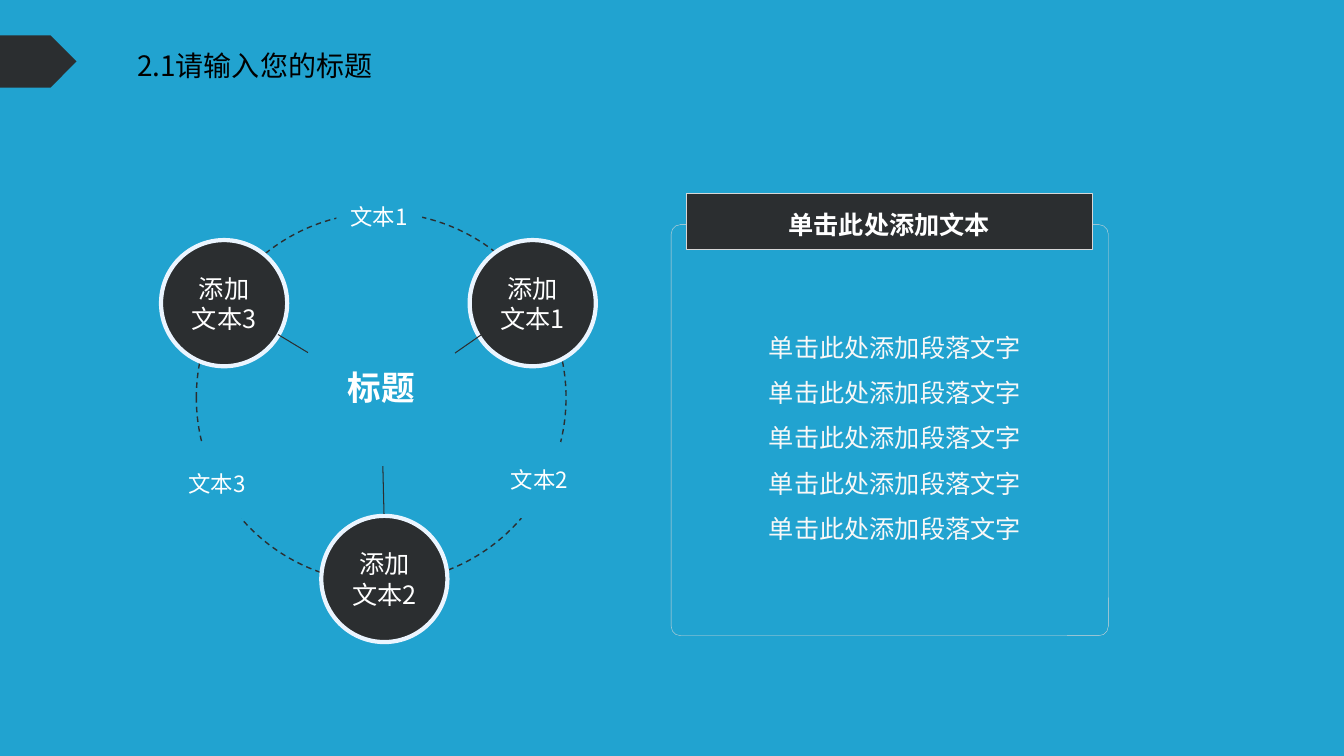
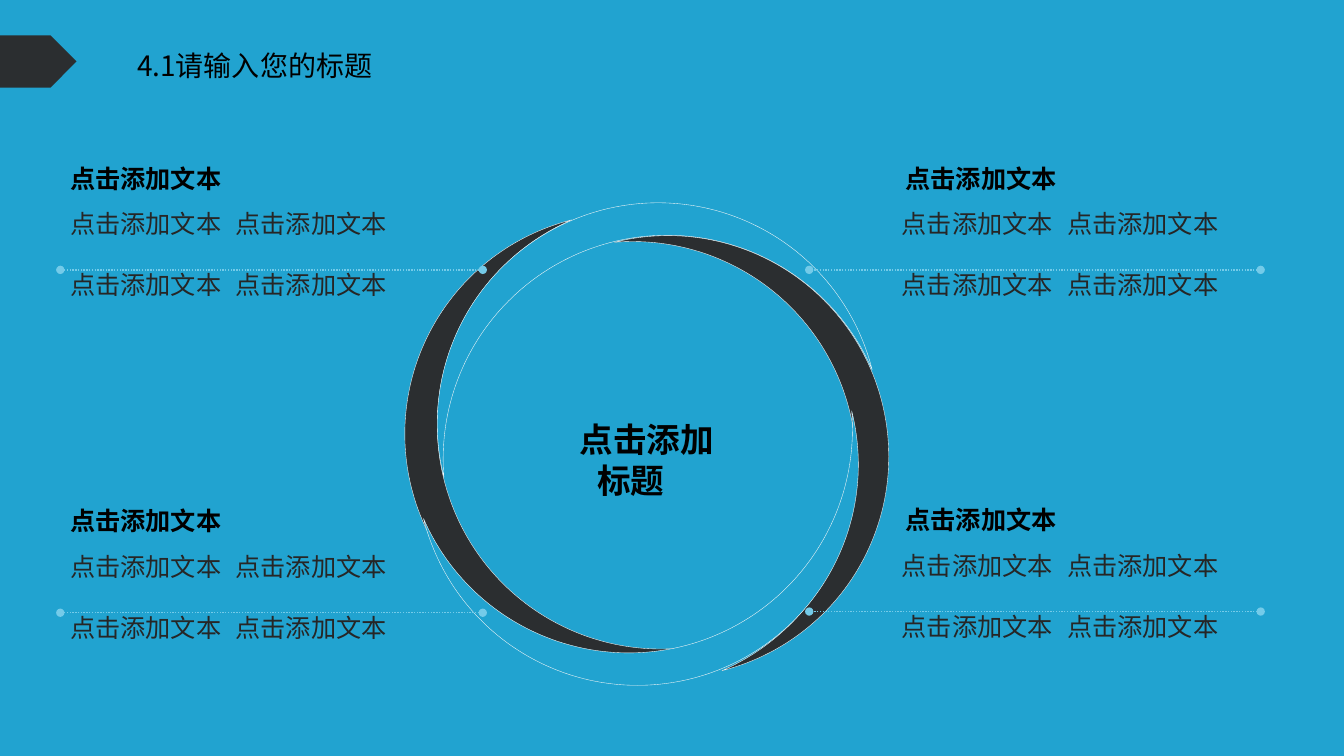
from lxml.etree import SubElement
from pptx import Presentation
from pptx.dml.color import RGBColor
from pptx.enum.dml import MSO_LINE as Dash
from pptx.enum.shapes import MSO_CONNECTOR as Link, MSO_SHAPE as Form
from pptx.enum.text import MSO_ANCHOR as Anchor, MSO_AUTO_SIZE as Fit, PP_ALIGN as Align
from pptx.oxml.ns import qn
from pptx.util import Cm, Pt

BLUE = RGBColor(0x21, 0xA3, 0xD0)
DARK = RGBColor(0x2B, 0x2E, 0x30)
GREY = RGBColor(0xD7, 0xD7, 0xD7)
PALE = RGBColor(0xF8, 0xF8, 0xF8)
ICE = RGBColor(0xEB, 0xF5, 0xFF)
SKY = RGBColor(0x74, 0xCB, 0xE9)
INK = RGBColor(0x26, 0x26, 0x26)
BLACK = RGBColor(0, 0, 0)
WHITE = RGBColor(0xFF, 0xFF, 0xFF)
FONT = "Noto Sans CJK SC"


class Deck:
    """Holds the shared style and the slide being drawn; all lengths are in cm."""

    def __init__(self):
        self.prs = Presentation()
        self.prs.slide_width, self.prs.slide_height = Cm(33.88), Cm(19.05)
        back = self.prs.slide_master.background.fill
        back.solid()
        back.fore_color.rgb = BLUE
        self.slide = None

    def start(self, title):
        """Add a slide with its title and the arrow band at the left edge."""
        self.slide = self.prs.slides.add_slide(self.prs.slide_layouts[5])
        head = self.slide.shapes.title
        head.left, head.top, head.width, head.height = map(Cm, (3.2, 1.09, 6.5, 1.12))
        head.text_frame.auto_size = Fit.NONE
        head.text_frame.vertical_anchor = Anchor.TOP
        self.label(head, [title], 20, BLACK, align=Align.LEFT)
        self.shape(Form.PENTAGON, (0, 0.89, 1.93, 1.32), DARK)
        self.shape(Form.CHEVRON, (1.57, 0.89, 1.19, 1.32), BLUE)

    def label(self, shape, lines, size, color, bold=False, align=Align.CENTER,
              space=None, gap=0, wrap=True, font=FONT):
        """Fill a shape with paragraphs; gap is the space between them in points."""
        frame = shape.text_frame
        frame.word_wrap = wrap
        for i, line in enumerate(lines):
            para = frame.add_paragraph() if i else frame.paragraphs[0]
            para.alignment = align
            if space:
                para.line_spacing = space
            if i and gap:
                para.space_before = Pt(gap)
            run = para.add_run()
            run.text = line
            run.font.size, run.font.bold = Pt(size), bold
            run.font.color.rgb = color
            run.font.name = font
            SubElement(run._r.get_or_add_rPr(), qn("a:ea"), typeface=FONT)

    def shape(self, form, box, fill=None, line=None, width=0.25, dash=None, turn=0, adj=None):
        item = self.slide.shapes.add_shape(form, *map(Cm, box))
        item.shadow.inherit = False
        item.rotation = turn
        if adj is not None:
            item.adjustments[0] = adj
        if fill is None:
            item.fill.background()
        else:
            item.fill.solid()
            item.fill.fore_color.rgb = fill
        if line is None:
            item.line.fill.background()
        else:
            item.line.color.rgb = line
            item.line.width = Pt(width)
            if dash:
                item.line.dash_style = dash
        item.text_frame.vertical_anchor = Anchor.MIDDLE
        return item

    def text(self, box, lines, size, color, **style):
        item = self.slide.shapes.add_textbox(*map(Cm, box))
        self.label(item, lines, size, color, **style)
        return item

    def line(self, ends, color, width, dots=False):
        """Draw a straight line; dots makes it dotted with round ends."""
        item = self.slide.shapes.add_connector(Link.STRAIGHT, *map(Cm, ends))
        item.line.color.rgb = color
        item.line.width = Pt(width)
        props = item.element.spPr
        if dots:
            item.line.dash_style = Dash.ROUND_DOT
            for end in ("a:headEnd", "a:tailEnd"):
                SubElement(props.find(qn("a:ln")), qn(end), type="oval")
        SubElement(props, qn("a:effectLst"))

    def block(self, left, top, shift, ends):
        """Draw a heading, two columns of text and the dotted line across them."""
        for col in range(2):
            self.text((left + 4.17 * col, top, 4.6, 3.33), ["点击添加文本"] * 2,
                      18, INK, align=Align.LEFT, gap=22)
        self.text((left + shift, top - 1.15, 5.84, 1.02), ["点击添加文本"],
                  18, BLACK, bold=True, align=Align.LEFT)
        start, stop = ends
        self.line((start, top + 1.67, stop, top + 1.67), SKY, 1, dots=True)


def cycle(deck):
    deck.start("2.1请输入您的标题")
    panel = deck.shape(Form.ROUNDED_RECTANGLE, (16.92, 5.66, 11.02, 10.36),
                       BLUE, GREY, adj=0.023)
    panel.text_frame.margin_left = Cm(0.51)
    deck.label(panel, ["单击此处添加段落文字"] * 5, 18, PALE, space=1.5)

    deck.shape(Form.OVAL, (4.95, 5.36, 9.32, 9.32), line=DARK, width=1, dash=Dash.DASH)
    nodes = [(11.84, 6.05, 1), (8.1, 13, 2), (4.06, 6.05, 3)]
    for left, top, num in nodes:
        node = deck.shape(Form.OVAL, (left, top, 3.18, 3.18), DARK, ICE, 3)
        deck.label(node, [f"添加文本{num}"], 18, WHITE)
    tags = [(8.48, 4.39, 1), (12.52, 11, 2), (4.39, 11.1, 3)]
    for left, top, num in tags:
        tag = deck.shape(Form.OVAL, (left, top, 2.16, 2.16), BLUE)
        deck.label(tag, [f"文本{num}"], 16, WHITE, wrap=False)
    spokes = [(9.68, 12.95, 9.65, 11.71), (12.14, 8.43, 11.15, 9.12), (7.01, 8.43, 8.15, 9.12)]
    for ends in spokes:
        deck.line(ends, DARK, 0.75)

    banner = deck.shape(Form.ROUNDED_RECTANGLE, (17.3, 4.88, 10.24, 1.4), DARK, GREY, adj=0)
    deck.label(banner, ["单击此处添加文本"], 18, WHITE, bold=True, space=1.2)
    hub = deck.shape(Form.OVAL, (7.57, 7.75, 4.09, 3.99), BLUE)
    deck.label(hub, ["标题"], 24, WHITE, bold=True, wrap=False, font="Arial Narrow")


def swirl(deck):
    deck.start("4.1请输入您的标题")
    moons = [(10.29, 6.05, DARK), (13.13, 2.41, BLUE), (16.76, 5.26, DARK), (13.97, 8.84, BLUE)]
    for i, (left, top, fill) in enumerate(moons):
        deck.shape(Form.MOON, (left, top, 5.56, 11.13), fill, PALE,
                   turn=(345.9 + 90 * i) % 360, adj=0.152)
    name = deck.text((13.49, 10.44, 4.83, 2.31), ["点击添加标题"], 24, BLACK, bold=True)
    props = name.text_frame.paragraphs[0]._p.get_or_add_pPr()
    props.set("marL", "0")
    props.set("indent", str(int(Cm(0.81))))

    right, left = (31.78, 20.4), (12.17, 1.52)
    for top in (5.13, 13.74):
        deck.block(22.48, top, 0.1, right)
    for top in (5.13, 13.77):
        deck.block(1.52, top, 0, left)


def main():
    deck = Deck()
    cycle(deck)
    swirl(deck)
    deck.prs.save("out.pptx")


if __name__ == "__main__":
    main()
